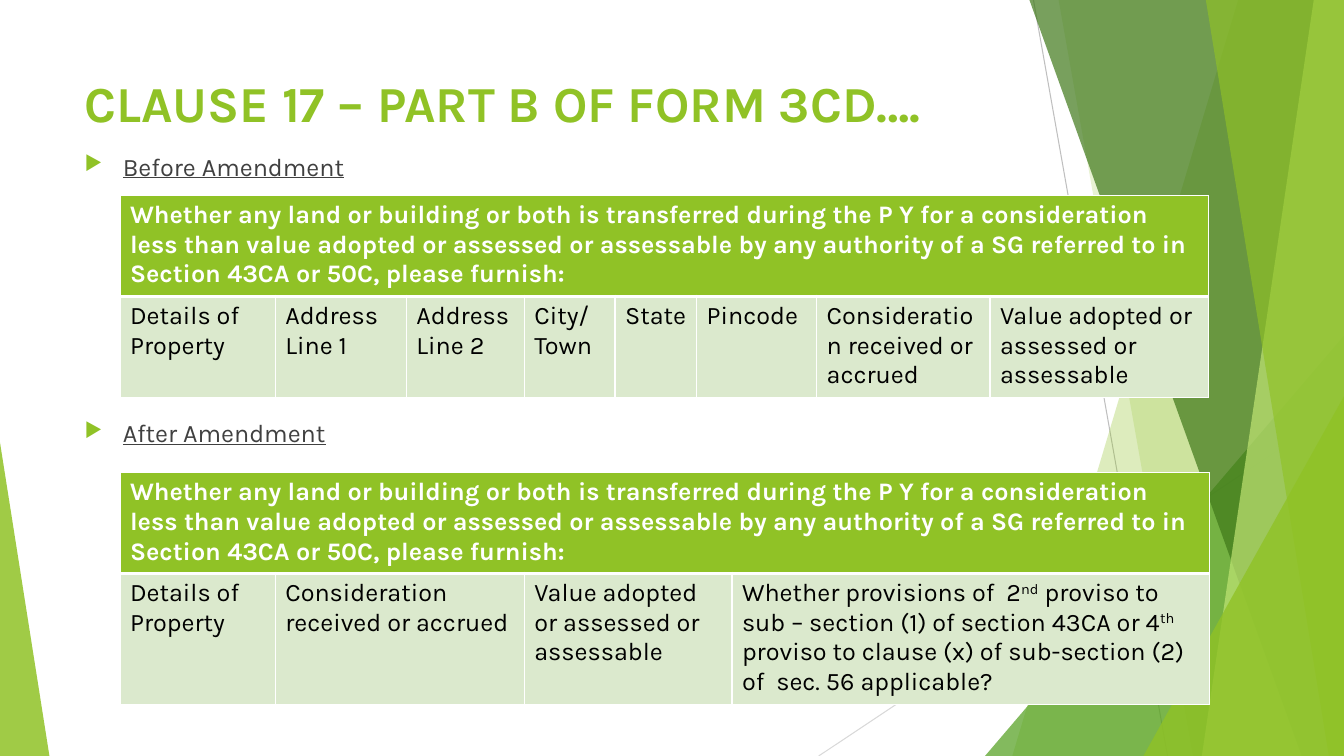
from lxml import etree
from pptx import Presentation
from pptx.dml.color import RGBColor
from pptx.enum.shapes import MSO_CONNECTOR, MSO_SHAPE
from pptx.enum.text import MSO_ANCHOR
from pptx.oxml.ns import qn
from pptx.util import Inches, Pt

STRAIGHT = MSO_CONNECTOR.STRAIGHT
TRIANGLE = MSO_SHAPE.ISOSCELES_TRIANGLE
MIDDLE, TOP = MSO_ANCHOR.MIDDLE, MSO_ANCHOR.TOP

GREEN = RGBColor(0x90, 0xC2, 0x26)
MID = RGBColor(0x54, 0xA0, 0x21)
DARK = RGBColor(0x3F, 0x78, 0x19)
LIME = RGBColor(0xC0, 0xE4, 0x74)
PALE = RGBColor(0xDB, 0xE9, 0xCD)
GREY = RGBColor(0x40, 0x40, 0x40)
SILVER = RGBColor(0xBF, 0xBF, 0xBF)
MIST = RGBColor(0xD9, 0xD9, 0xD9)
WHITE = RGBColor(0xFF, 0xFF, 0xFF)
BLACK = RGBColor(0, 0, 0)
FONT = "Karla"
WIDE, HIGH = 13.33, 7.5

TITLE = "CLAUSE 17 – PART B OF FORM 3CD…."
HEAD = ("Whether any land or building or both is transferred during the P Y "
        "for a consideration less than value adopted or assessed or assessable "
        "by any authority of a SG referred to in Section 43CA or 50C, "
        "please furnish:")

# Each cell is a list of runs; every second run is superscript.
BEFORE = [
    (1.54, ["Details of Property"]),
    (1.3, ["Address Line 1"]),
    (1.17, ["Address Line 2"]),
    (0.9, ["City/ Town"]),
    (0.81, ["State"]),
    (1.19, ["Pincode"]),
    (1.72, ["Consideration received or accrued"]),
    (2.17, ["Value adopted or assessed or assessable"]),
]
AFTER = [
    (1.54, ["Details of Property"]),
    (2.47, ["Consideration received or accrued"]),
    (2.06, ["Value adopted or assessed or assessable"]),
    (4.74, ["Whether provisions of  2", "nd",
            " proviso to sub – section (1) of section 43CA or 4", "th",
            " proviso to clause (x) of sub-section (2) of  sec. 56 applicable?"]),
]
# Label, label top, table top, row heights, columns
PARTS = [
    ("Before Amendment", 1.45, 1.94, (0.98, 0.98), BEFORE),
    ("After Amendment", 4.09, 4.69, (0.98, 1.27), AFTER),
]

LINES = [(10.25, 0, 11.58, HIGH, SILVER), (WIDE, 4.03, 8.12, HIGH, MIST)]
# Bands run to the right edge: colour, opacity, left x at top, left x at bottom
BACK = [(GREEN, 30, 12.28, 10.04), (GREEN, 20, 10.5, 11.83)]
FRONT = [(DARK, 70, 10.21, 12.91), (LIME, 70, 13.03, 11.92),
         (GREEN, 65, 11.96, 13.18)]
# Corners stand on the bottom edge: colour, opacity, left, top, width, apex
INNER = [(MID, 72, 9.77, 3.33, 3.56, 1)]
OUTER = [(GREEN, 80, 11.34, 3.93, 1.99, 1), (GREEN, 85, 0, 4.39, 0.49, 0)]

deck = Presentation()
deck.slide_width, deck.slide_height = Inches(WIDE), Inches(HIGH)
slide = deck.slides.add_slide(deck.slide_layouts[6])
shapes = slide.shapes


def tint(shape, colour, alpha):
    """Give a plain fill with an opacity in percent."""
    shape.shadow.inherit = False
    shape.fill.solid()
    shape.fill.fore_color.rgb = colour
    shape.line.fill.background()
    node = shape.fill._xPr.find(qn("a:solidFill"))[0]
    etree.SubElement(node, qn("a:alpha"), val=str(alpha * 1000))


def draw_bands(bands):
    for colour, alpha, top, base in bands:
        pen = shapes.build_freeform(Inches(top), 0)
        pen.add_line_segments([(Inches(x), Inches(y)) for x, y in
                               ((WIDE, 0), (WIDE, HIGH), (base, HIGH))])
        tint(pen.convert_to_shape(), colour, alpha)


def draw_corners(corners):
    for colour, alpha, left, top, width, apex in corners:
        shape = shapes.add_shape(TRIANGLE, Inches(left), Inches(top),
                                 Inches(width), Inches(HIGH - top))
        shape.adjustments[0] = apex
        tint(shape, colour, alpha)


def style(par, size, colour, bold=False):
    font = par.font
    font.name, font.size, font.bold = FONT, Pt(size), bold
    font.color.rgb = colour


def add_text(text, top, width, height, size, colour, bold=False, anchor=TOP):
    box = shapes.add_textbox(Inches(0.74), Inches(top),
                             Inches(width), Inches(height))
    frame = box.text_frame
    frame.word_wrap, frame.vertical_anchor = True, anchor
    par = frame.paragraphs[0]
    par.text = text
    style(par, size, colour, bold)
    return par


def add_bullet(par):
    props = par._p.get_or_add_pPr()
    props.set("marL", str(Inches(0.38)))
    props.set("indent", str(-Inches(0.38)))
    marks = [etree.Element(qn("a:buClr")),
             etree.Element(qn("a:buSzPct"), val="80000"),
             etree.Element(qn("a:buChar"), char="▶")]
    etree.SubElement(marks[0], qn("a:srgbClr"), val=str(GREEN))
    for spot, mark in enumerate(marks):
        props.insert(spot, mark)


def set_edges(cell, row):
    """Draw white cell borders, thick between header and body."""
    props = cell._tc.get_or_add_tcPr()
    thick = "lnT" if row else "lnB"
    for spot, side in enumerate(("lnL", "lnR", "lnT", "lnB")):
        line = etree.Element(qn("a:" + side),
                             w=str(Pt(3 if side == thick else 1)))
        fill = etree.SubElement(line, qn("a:solidFill"))
        etree.SubElement(fill, qn("a:srgbClr"), val=str(WHITE))
        props.insert(spot, line)


def add_grid(top, heights, cols):
    grid = shapes.add_table(2, len(cols), Inches(1.19), Inches(top),
                            Inches(sum(w for w, _ in cols)),
                            Inches(sum(heights))).table
    for row, height in zip(grid.rows, heights):
        row.height = Inches(height)
    for c, (width, runs) in enumerate(cols):
        grid.columns[c].width = Inches(width)
        for r, fill in enumerate((GREEN, PALE)):
            cell = grid.cell(r, c)
            cell.fill.solid()
            cell.fill.fore_color.rgb = fill
            set_edges(cell, r)
        par = grid.cell(1, c).text_frame.paragraphs[0]
        style(par, 18, BLACK)
        for i, text in enumerate(runs):
            run = par.add_run()
            run.text = text
            if i % 2:
                run._r.get_or_add_rPr().set("baseline", "30000")
    head = grid.cell(0, 0)
    head.merge(grid.cell(0, len(cols) - 1))
    head.text = HEAD
    style(head.text_frame.paragraphs[0], 18, WHITE, True)


for x1, y1, x2, y2, colour in LINES:
    line = shapes.add_connector(STRAIGHT, Inches(x1), Inches(y1),
                                Inches(x2), Inches(y2))
    line.line.color.rgb, line.line.width = colour, Pt(0.75)
    etree.SubElement(line._element.spPr, qn("a:effectLst"))
draw_bands(BACK)
draw_corners(INNER)
draw_bands(FRONT)
draw_corners(OUTER)

add_text(TITLE, 0.67, 9.4, 0.7, 36, GREEN, True, MIDDLE)
for label, spot, top, heights, cols in PARTS:
    par = add_text(label, spot, 10.31, 0.4, 18, GREY)
    par.font.underline = True
    add_bullet(par)
    add_grid(top, heights, cols)

deck.save("out.pptx")
